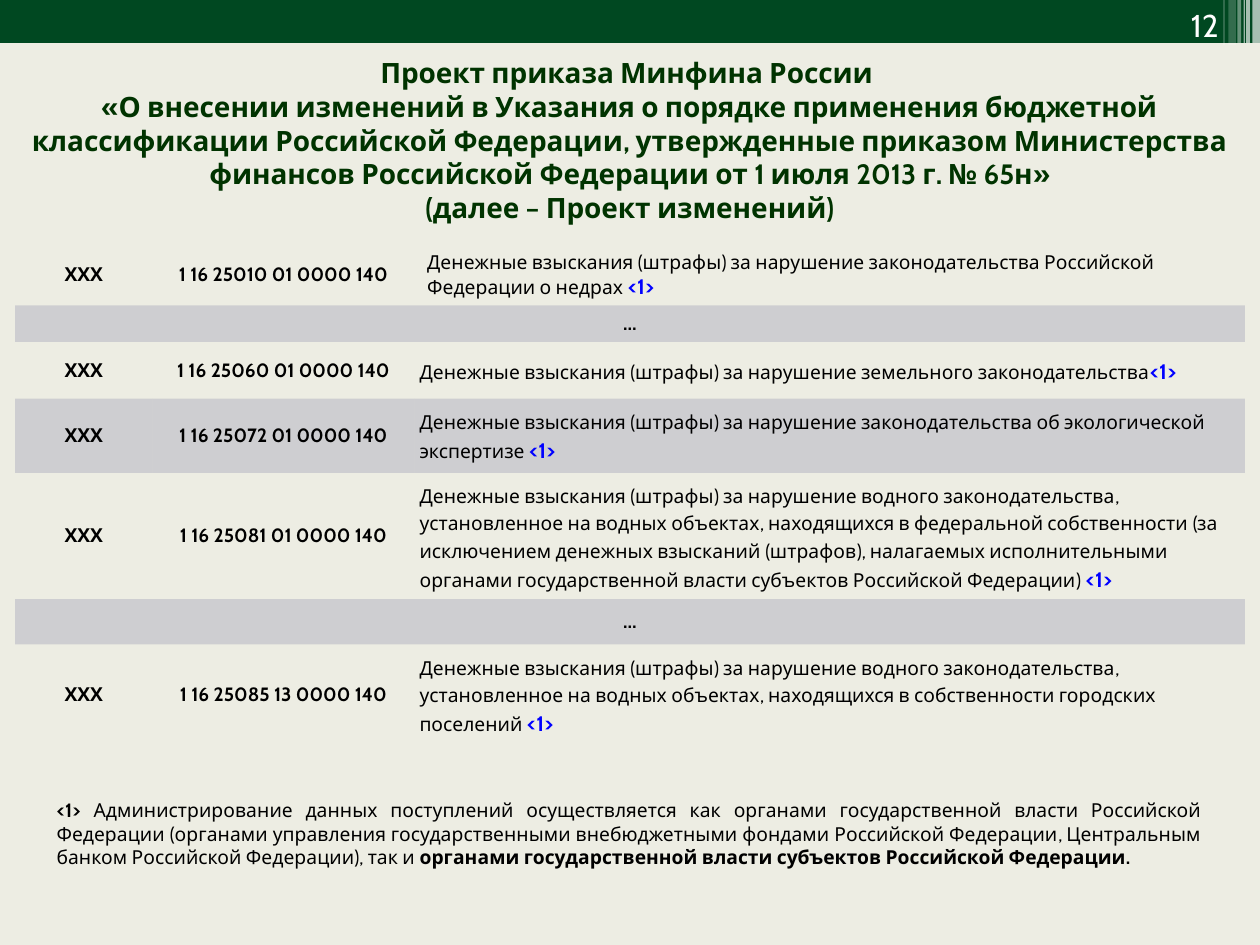
from lxml.etree import SubElement
from pptx import Presentation
from pptx.dml.color import RGBColor
from pptx.enum.shapes import MSO_SHAPE as Shape
from pptx.enum.text import MSO_ANCHOR as Anchor, MSO_AUTO_SIZE as AutoSize, PP_ALIGN as Align
from pptx.oxml.ns import qn
from pptx.util import Inches, Pt

COLORS = {
    "background": "EDEDE3", "banner": "004821", "white": "FFFFFF", "title": "003300",
    "text": "000000", "mark": "0000FF", "band": "53548A",
}
FONT = "Cabin"
NO_STYLE = "{2D5ABB26-0587-4C30-8999-92F81FD0307C}"
STRIPES = [
    (9.94, 0.06, 0.34, 65), (9.89, 0.03, 0.34, 65), (9.87, 0.01, 0.34, 60),
    (9.82, 0.03, 0.34, 40), (9.75, 0.06, 0.36, 20), (9.71, 0.01, 0.36, 30),
]
TITLE = [
    "Проект приказа Минфина России ",
    "«О внесении изменений в Указания о порядке применения бюджетной классификации "
    "Российской Федерации, утвержденные приказом Министерства финансов Российской "
    "Федерации от 1 июля 2013 г. № 65н»",
    "(далее – Проект изменений)",
]
FINES = "Денежные взыскания (штрафы) за нарушение "
WATER = FINES + "водного законодательства, установленное на водных объектах, находящихся в "
COLUMNS = [1.09, 2.08, 6.59]
ROWS = [
    (0.48, "1 16 25010 01 0000 140",
     FINES + "законодательства Российской Федерации о недрах "),
    (0.29, None, None),
    (0.45, "1 16 25060 01 0000 140", FINES + "земельного законодательства"),
    (0.59, "1 16 25072 01 0000 140",
     FINES + "законодательства об экологической экспертизе "),
    (1.0, "1 16 25081 01 0000 140",
     WATER + "федеральной собственности (за исключением денежных взысканий (штрафов), "
     "налагаемых исполнительными органами государственной власти субъектов "
     "Российской Федерации) "),
    (0.36, None, None),
    (0.8, "1 16 25085 13 0000 140", WATER + "собственности городских поселений "),
]
NOTE = [
    ("<1> ", True),
    ("Администрирование данных поступлений осуществляется как органами государственной "
     "власти Российской Федерации (органами управления государственными внебюджетными "
     "фондами Российской Федерации, Центральным банком Российской Федерации), так и ", False),
    ("органами государственной власти субъектов Российской Федерации.", True),
]


def paint(fill, color, opacity=100):
    fill.solid()
    fill.fore_color.rgb = RGBColor.from_string(COLORS[color])
    if opacity < 100:
        node = fill._xPr.find(qn("a:solidFill"))[0]
        SubElement(node, qn("a:alpha")).set("val", str(opacity * 1000))


def add_span(para, text, size=11, color="text", bold=False):
    span = para.add_run()
    span.text = text
    span.font.name = FONT
    span.font.size = Pt(size)
    span.font.bold = bold
    span.font.color.rgb = RGBColor.from_string(COLORS[color])


def add_bar(page, left, width, height, color, opacity=100):
    bar = page.shapes.add_shape(
        Shape.RECTANGLE, Inches(left), 0, Inches(width), Inches(height))
    bar.shadow.inherit = False
    bar.line.fill.background()
    paint(bar.fill, color, opacity)


def add_box(page, left, top, width, height, align, anchor=Anchor.TOP):
    box = page.shapes.add_textbox(Inches(left), Inches(top), Inches(width), Inches(height))
    box.text_frame.word_wrap = True
    box.text_frame.vertical_anchor = anchor
    para = box.text_frame.paragraphs[0]
    para.alignment = align
    return para


def set_title(page):
    title = page.shapes.title
    title.left, title.top = Inches(0.12), Inches(0.36)
    title.width, title.height = Inches(9.76), Inches(1.5)
    frame = title.text_frame
    frame.auto_size = AutoSize.NONE
    frame.vertical_anchor = Anchor.MIDDLE
    for index, text in enumerate(TITLE):
        para = frame.add_paragraph() if index else frame.paragraphs[0]
        para.alignment = Align.CENTER
        add_span(para, text, 16, "title", True)


def fill_label(cell, text):
    para = cell.text_frame.paragraphs[0]
    para.alignment = Align.CENTER
    add_span(para, text, bold=True)


def fill_description(cell, text, spaced):
    para = cell.text_frame.paragraphs[0]
    if spaced:
        para.line_spacing = 1.15
        cell.margin_left = cell.margin_right = Inches(0.04)
        cell.margin_top = cell.margin_bottom = Inches(0.07)
    add_span(para, text)
    add_span(para, "<1>", 12, "mark", True)


def add_codes_table(page):
    height = sum(row[0] for row in ROWS)
    table = page.shapes.add_table(
        len(ROWS), len(COLUMNS), Inches(0.12), Inches(1.94),
        Inches(sum(COLUMNS)), Inches(height)).table
    table.first_row = table.horz_banding = False
    table._tbl.tblPr.find(qn("a:tableStyleId")).text = NO_STYLE
    for column, width in zip(table.columns, COLUMNS):
        column.width = Inches(width)
    for index, (height, code, description) in enumerate(ROWS):
        table.rows[index].height = Inches(height)
        cells = [table.cell(index, column) for column in range(len(COLUMNS))]
        for cell in cells:
            cell.vertical_anchor = Anchor.MIDDLE
            if index % 2:
                paint(cell.fill, "band", 20)
            else:
                cell.fill.background()
        if code is None:
            cells[0].merge(cells[-1])
            fill_label(cells[0], "…")
        else:
            fill_label(cells[0], "ХХХ")
            fill_label(cells[1], code)
            fill_description(cells[2], description, index > 0)


def main():
    deck = Presentation()
    deck.slide_width, deck.slide_height = Inches(10), Inches(7.5)
    page = deck.slides.add_slide(deck.slide_layouts[5])
    paint(page.background.fill, "background")
    add_bar(page, 0, 10, 0.34, "banner")
    for left, width, height, opacity in STRIPES:
        add_bar(page, left, width, height, "white", opacity)
    number = add_box(page, 8.94, 0, 0.83, 0.4, Align.RIGHT, Anchor.BOTTOM)
    add_span(number, "12", 18, "white")
    set_title(page)
    add_codes_table(page)
    note = add_box(page, 0.35, 6.29, 9.29, 0.66, Align.JUSTIFY)
    for text, bold in NOTE:
        add_span(note, text, bold=bold)
    deck.save("out.pptx")


if __name__ == "__main__":
    main()
